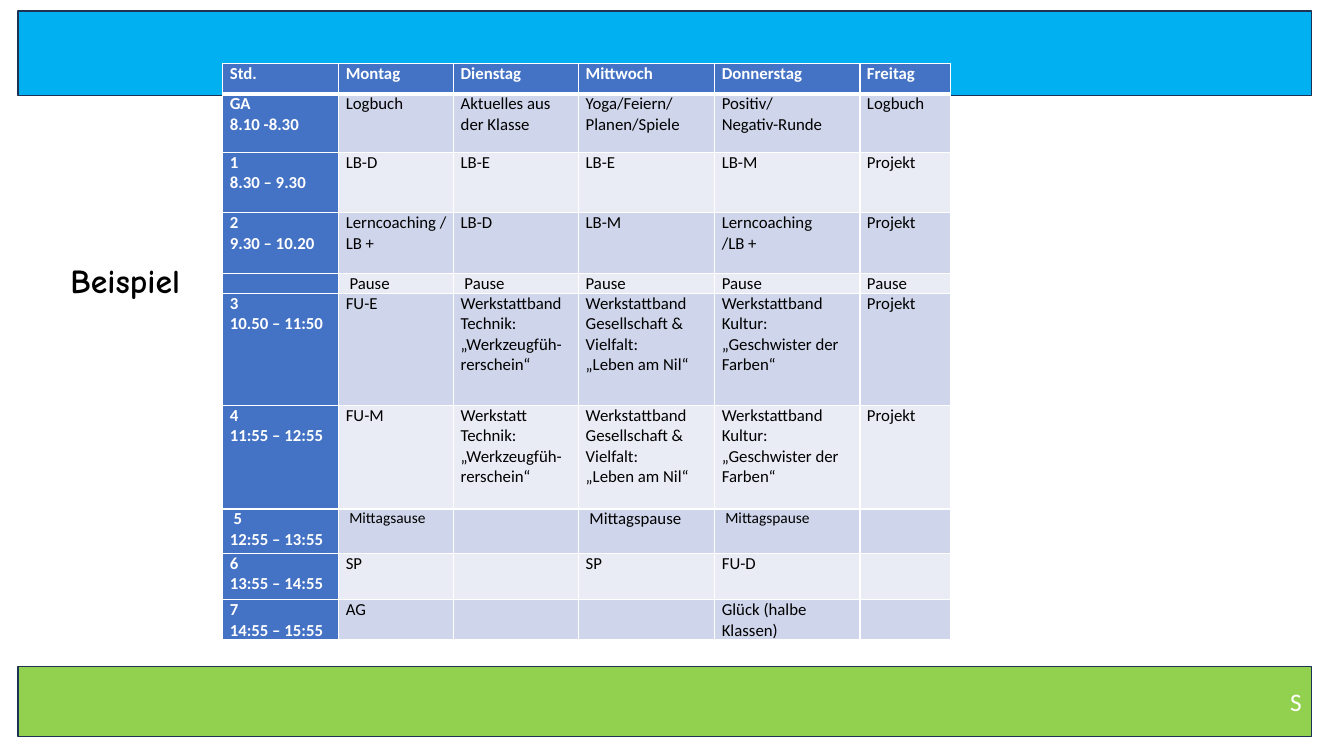
from lxml import etree
from pptx import Presentation, util as u
from pptx.dml.color import RGBColor
from pptx.enum import shapes, text
from pptx.oxml.ns import qn

# Content: one row per lesson, "\n" starts a new paragraph
TITLE = "Beispiel"
FOOTER = "S"
KULTUR = "Werkstattband\nKultur:\n„Geschwister der Farben“"
VIELFALT = "Werkstattband\nGesellschaft & Vielfalt:\n„Leben am Nil“"
TIMETABLE = [
    ["Std.", "Montag", "Dienstag", "Mittwoch", "Donnerstag", "Freitag"],
    ["GA\n8.10 -8.30", "Logbuch", "Aktuelles aus der Klasse", "Yoga/Feiern/Planen/Spiele",
     "Positiv/\nNegativ-Runde", "Logbuch"],
    ["1\n8.30 – 9.30", "LB-D", "LB-E", "LB-E", "LB-M", "Projekt"],
    ["2\n9.30 – 10.20", "Lerncoaching /LB +", "LB-D", "LB-M", "Lerncoaching\n/LB +", "Projekt"],
    ["", " Pause", " Pause", "Pause", "Pause", "Pause"],
    ["3\n10.50 – 11:50", "FU-E", "Werkstattband\nTechnik: „Werkzeugfüh-rerschein“",
     VIELFALT, KULTUR, "Projekt"],
    ["4\n11:55 – 12:55", "FU-M", "Werkstatt Technik: „Werkzeugfüh-rerschein“",
     VIELFALT, KULTUR, "Projekt"],
    [" 5\n12:55 – 13:55", " Mittagsause", "", " Mittagspause", " Mittagspause", ""],
    ["6\n13:55 – 14:55", "SP", "", "SP", "FU-D", ""],
    ["7\n14:55 – 15:55", "AG", "", "", "Glück (halbe Klassen)", ""],
]
COLS = [1.15, 1.14, 1.24, 1.35, 1.44, 0.9]
ROWS = [0.3, 0.58, 0.6, 0.6, 0.2, 1.11, 1.03, 0.44, 0.46, 0.4]
SMALL = {(7, 1), (7, 4)}  # cells set in 11 pt
HEAD, BANDS = "4472C4", ("E9EBF5", "CFD5EA")
WHITE, BLACK = "FFFFFF", "000000"


def rgb(value):
    return RGBColor.from_string(value)


def inches(*values):
    return [u.Inches(v) for v in values]


def write(p, words, size, color, name="Calibri", bold=False):
    r = p.add_run()
    r.text = words
    r.font.color.rgb = rgb(color)
    for key, value in dict(size=u.Pt(size), name=name, bold=bold).items():
        setattr(r.font, key, value)


def add_bar(top, height, color):
    sp = s.shapes.add_shape(shapes.MSO_SHAPE.RECTANGLE, *inches(0.18, top, 12.83, height))
    sp.shadow.inherit = False
    sp.fill.solid()
    sp.fill.fore_color.rgb = rgb(color)
    sp.line.color.rgb = rgb("1E3256")
    sp.line.width = u.Pt(1)
    return sp


def add_borders(cell, top, bottom):
    tc_pr = cell._tc.get_or_add_tcPr()
    for i, (side, width) in enumerate(dict(L=1, R=1, T=top, B=bottom).items()):
        ln = etree.Element(qn("a:ln" + side), w=str(u.Pt(width)))
        fill = etree.SubElement(ln, qn("a:solidFill"))
        etree.SubElement(fill, qn("a:srgbClr"), val=WHITE)
        tc_pr.insert(i, ln)


prs = Presentation()
prs.slide_width, prs.slide_height = inches(13.33, 7.5)
s = prs.slides.add_slide(prs.slide_layouts[6])

# Top and bottom bars
add_bar(0.11, 0.84, "00B0F0")
tf = add_bar(6.61, 0.7, "92D050").text_frame
tf.vertical_anchor = text.MSO_ANCHOR.MIDDLE
tf.paragraphs[0].alignment = text.PP_ALIGN.RIGHT
write(tf.paragraphs[0], FOOTER, 18, WHITE)

# Title
tf = s.shapes.add_textbox(*inches(0.6, 2.53, 1.52, 0.81)).text_frame
tf.word_wrap = True
write(tf.paragraphs[0], TITLE, 24, BLACK, "Comic Neue", True)

# Timetable
table = s.shapes.add_table(len(ROWS), len(COLS),
                           *inches(2.21, 0.63, sum(COLS), sum(ROWS))).table
for column, width in zip(table.columns, COLS):
    column.width = u.Inches(width)
for row, height in zip(table.rows, ROWS):
    row.height = u.Inches(height)

MARGINS = dict(margin_left=0.07, margin_right=0.07, margin_top=0, margin_bottom=0)
for i, lesson in enumerate(TIMETABLE):
    for j, words in enumerate(lesson):
        cell = table.cell(i, j)
        head = i == 0 or j == 0
        for key, value in MARGINS.items():
            setattr(cell, key, u.Inches(value))
        add_borders(cell, top=3 if i == 1 else 1, bottom=3 if i == 0 else 1)
        cell.fill.solid()
        cell.fill.fore_color.rgb = rgb(HEAD if head else BANDS[i % 2])
        tf = cell.text_frame
        if not words:  # keeps an empty cell as low as its row
            etree.SubElement(tf.paragraphs[0]._p, qn("a:endParaRPr"), sz="1200")
            continue
        for k, line in enumerate(words.split("\n")):
            p = tf.add_paragraph() if k else tf.paragraphs[0]
            write(p, line, 11 if (i, j) in SMALL else 12, WHITE if head else BLACK, bold=head)

prs.save("out.pptx")
